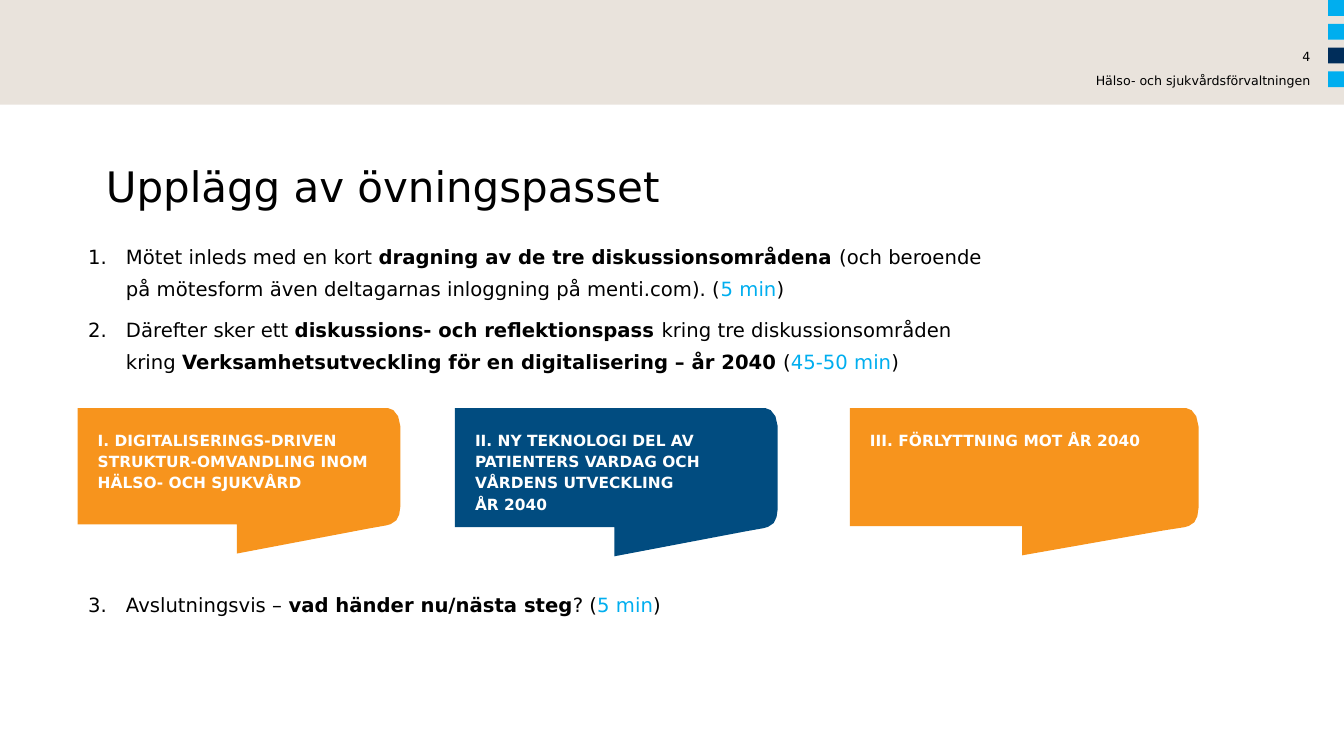
from dataclasses import dataclass

import pptx
import pptx.dml.color
import pptx.enum.shapes
import pptx.enum.text
import pptx.oxml.ns
import pptx.shapes.autoshape
import pptx.slide
import pptx.text.text
import pptx.util
from lxml import etree

Pt = pptx.util.Pt
RGBColor = pptx.dml.color.RGBColor
Align = pptx.enum.text.PP_ALIGN

FONT = "DejaVu Sans"
BLACK = RGBColor(0x00, 0x00, 0x00)
WHITE = RGBColor(0xFF, 0xFF, 0xFF)
SAND = RGBColor(0xE9, 0xE3, 0xDC)
SKY = RGBColor(0x00, 0xAE, 0xEF)
NAVY = RGBColor(0x00, 0x2D, 0x5A)
ORANGE = RGBColor(0xF7, 0x94, 0x1D)
BLUE = RGBColor(0x01, 0x4C, 0x80)


@dataclass
class Span:
    text: str
    bold: bool = False
    color: RGBColor = BLACK


@dataclass
class Step:
    number: int
    space_before: float
    spans: list[Span]


@dataclass
class Callout:
    left: float
    width: float
    height: float
    color: RGBColor
    text: str


STEPS = [
    Step(1, 0, [
        Span("Mötet inleds med en kort "),
        Span("dragning av de tre diskussionsområdena ", bold=True),
        Span("(och beroende på mötesform även deltagarnas inloggning på menti.com). ("),
        Span("5 min", color=SKY),
        Span(")"),
    ]),
    Step(2, 5, [
        Span("Därefter sker ett "),
        Span("diskussions- och reflektionspass ", bold=True),
        Span("kring tre diskussionsområden kring "),
        Span("Verksamhetsutveckling för en digitalisering – år 2040", bold=True),
        Span(" ("),
        Span("45-50 min", color=SKY),
        Span(")"),
    ]),
    Step(3, 149, [
        Span("Avslutningsvis – "),
        Span("vad händer nu/nästa steg", bold=True),
        Span("? ("),
        Span("5 min", color=SKY),
        Span(")"),
    ]),
]

CALLOUTS = [
    Callout(55.4, 230.6, 83, ORANGE,
            "I. DIGITALISERINGS-DRIVEN STRUKTUR-OMVANDLING INOM HÄLSO- OCH SJUKVÅRD"),
    Callout(324.9, 230.6, 85, BLUE,
            "II. NY TEKNOLOGI DEL AV PATIENTERS VARDAG OCH VÅRDENS UTVECKLING\vÅR 2040"),
    Callout(607, 249.1, 84.3, ORANGE, "III. FÖRLYTTNING MOT ÅR 2040"),
]
CALLOUT_TOP = 291.6


def add_text(para: pptx.text.text._Paragraph, text: str, *, size: float,
             color: RGBColor = BLACK, bold: bool = False) -> None:
    for index, line in enumerate(text.split("\v")):
        if index:
            para.add_line_break()
        span = para.add_run()
        span.text = line
        span.font.name = FONT
        span.font.size = Pt(size)
        span.font.bold = bold
        span.font.color.rgb = color


def set_frame(frame: pptx.text.text.TextFrame, left: float = 0, top: float = 0,
              right: float = 0, bottom: float = 0) -> None:
    frame.word_wrap = True
    frame.auto_size = pptx.enum.text.MSO_AUTO_SIZE.NONE
    frame.vertical_anchor = pptx.enum.text.MSO_ANCHOR.TOP
    frame.margin_left, frame.margin_top = Pt(left), Pt(top)
    frame.margin_right, frame.margin_bottom = Pt(right), Pt(bottom)


def place(box: pptx.shapes.autoshape.Shape, left: float, top: float,
          width: float, height: float) -> None:
    box.left, box.top = Pt(left), Pt(top)
    box.width, box.height = Pt(width), Pt(height)


def paint(shape: pptx.shapes.autoshape.Shape, color: RGBColor) -> None:
    shape.shadow.inherit = False
    shape.fill.solid()
    shape.fill.fore_color.rgb = color
    shape.line.fill.background()


def add_block(page: pptx.slide.Slide, left: float, top: float, width: float,
              height: float, color: RGBColor) -> None:
    block = page.shapes.add_shape(pptx.enum.shapes.MSO_SHAPE.RECTANGLE,
                                  Pt(left), Pt(top), Pt(width), Pt(height))
    paint(block, color)


def add_header_line(page: pptx.slide.Slide, top: float, text: str) -> None:
    box = page.shapes.add_textbox(Pt(671.8), Pt(top), Pt(264.2), Pt(10.1))
    set_frame(box.text_frame)
    para = box.text_frame.paragraphs[0]
    para.alignment = Align.RIGHT
    add_text(para, text, size=9)


def add_step(para: pptx.text.text._Paragraph, step: Step) -> None:
    para.alignment = Align.LEFT
    para.line_spacing = 1.35
    para.space_before, para.space_after = Pt(step.space_before), Pt(2)
    props = para._p.get_or_add_pPr()
    props.set("marL", str(Pt(37.4)))
    props.set("indent", str(Pt(-27)))
    etree.SubElement(props, pptx.oxml.ns.qn("a:buFont"), typeface="+mj-lt")
    etree.SubElement(props, pptx.oxml.ns.qn("a:buAutoNum"),
                     type="arabicPeriod", startAt=str(step.number))
    for span in step.spans:
        add_text(para, span.text, size=14, color=span.color, bold=span.bold)


def add_callout(page: pptx.slide.Slide, callout: Callout) -> None:
    right, base = callout.width, callout.height
    tail = 0.494 * right
    outline = [
        (0, 0), (0, base), (tail, base), (tail, base + 20.8),
        (0.9 * right, base + 3), (right - 10, base + 0.7), (right - 7, base - 0.2),
        (right - 2.9, base - 2.9), (right - 0.8, base - 7.2), (right, base - 13),
        (right, 13), (right - 1.6, 5.8), (right - 5, 1.4), (right - 8.6, 0),
    ]
    points = [(Pt(callout.left + x), Pt(CALLOUT_TOP + y)) for x, y in outline]
    builder = page.shapes.build_freeform(*points[0])
    builder.add_line_segments(points[1:], close=True)
    shape = builder.convert_to_shape()
    paint(shape, callout.color)
    set_frame(shape.text_frame, left=14.4, top=14.4)
    para = shape.text_frame.paragraphs[0]
    para.alignment = Align.LEFT
    para.line_spacing = 1.15
    add_text(para, callout.text, size=11, color=WHITE, bold=True)


def main() -> None:
    deck = pptx.Presentation()
    deck.slide_width, deck.slide_height = Pt(960), Pt(540)
    page = deck.slides.add_slide(deck.slide_layouts[1])

    # Header band with colour squares
    add_block(page, 0, 0, 960, 74.8, SAND)
    for index, color in enumerate([SKY, SKY, NAVY, SKY]):
        add_block(page, 948.7, 17 * index, 11.3, 11.3, color)
    add_header_line(page, 51.8, "Hälso- och sjukvårdsförvaltningen")
    add_header_line(page, 35.3, "4")

    # Title
    title = page.shapes.title
    place(title, 75.6, 114.5, 808.6, 65.5)
    set_frame(title.text_frame)
    title.text_frame.paragraphs[0].alignment = Align.LEFT
    add_text(title.text_frame.paragraphs[0], "Upplägg av övningspasset", size=30)

    # Numbered steps
    body = page.placeholders[1]
    place(body, 45.4, 165.6, 666.7, 374.4)
    set_frame(body.text_frame, left=7.2, top=3.6, right=7.2, bottom=3.6)
    for index, step in enumerate(STEPS):
        frame = body.text_frame
        add_step(frame.add_paragraph() if index else frame.paragraphs[0], step)

    # Discussion areas
    for callout in CALLOUTS:
        add_callout(page, callout)

    deck.save("out.pptx")


if __name__ == "__main__":
    main()
